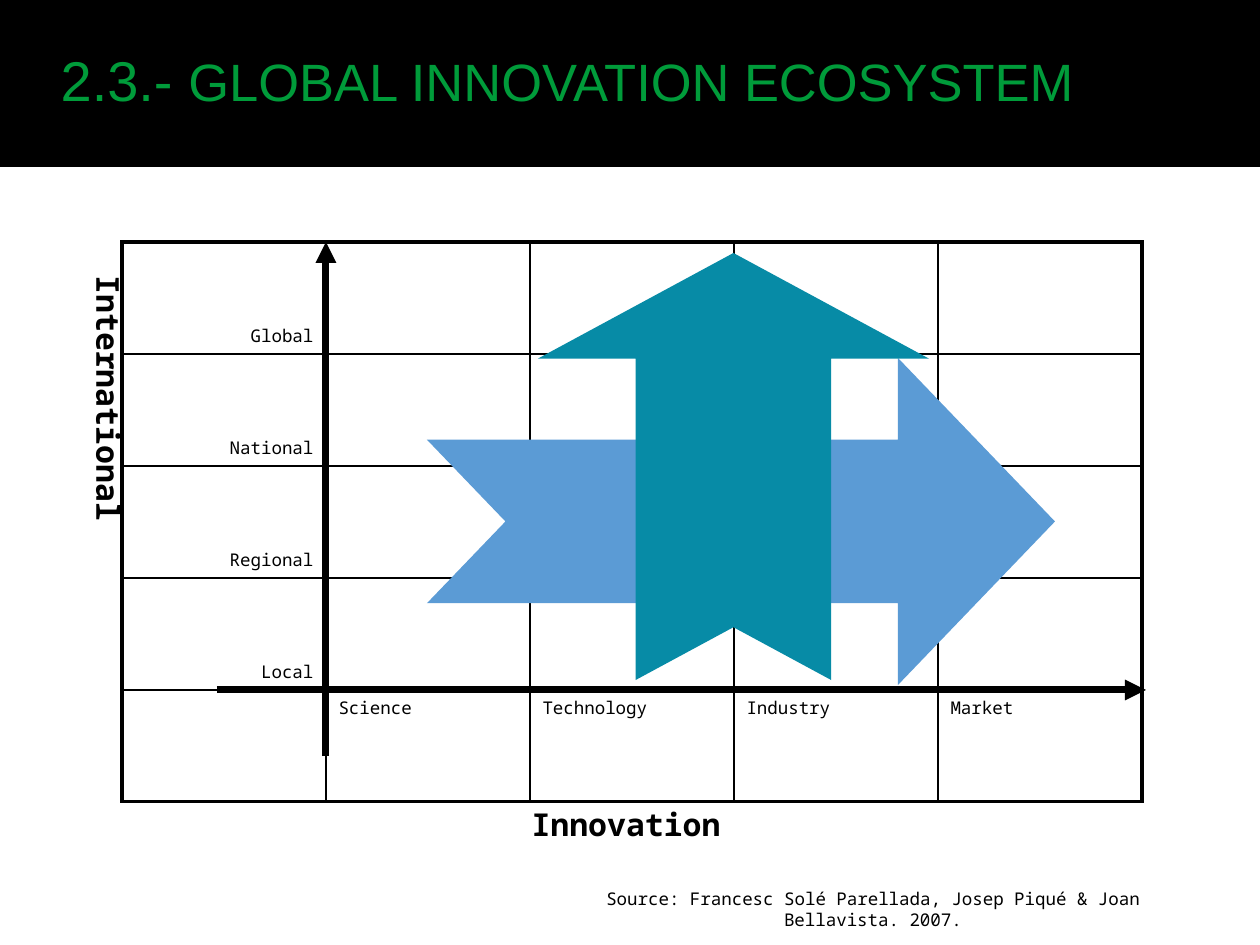
"""Build the global innovation ecosystem slide: a grid with two axes and two arrows."""
from lxml import etree
from pptx import Presentation
from pptx import util as u
from pptx.dml.color import RGBColor
from pptx.enum import shapes, text
from pptx.oxml import ns

PX = 914400 / 126
MONO = "Noto Sans Mono"
BLACK = "000000"


def px(*values):
    return [u.Emu(round(value * PX)) for value in values]


def write(para, words, size, color=BLACK, name=MONO, bold=False):
    span = para.add_run()
    span.text = words
    font = {"size": u.Pt(size), "name": name, "bold": bold}
    for key, value in font.items():
        setattr(span.font, key, value)
    span.font.color.rgb = RGBColor.from_string(color)


deck = Presentation()
deck.slide_width, deck.slide_height = px(1260, 945)
page = deck.slides.add_slide(deck.slide_layouts[5])

bar = page.shapes.add_shape(shapes.MSO_SHAPE.RECTANGLE, *px(0, 0, 1260, 166))
bar.shadow.inherit = False
bar.fill.solid()
bar.fill.fore_color.rgb = RGBColor.from_string(BLACK)
bar.line.color.rgb = RGBColor.from_string(BLACK)
bar.line.width = u.Pt(1)

title = page.shapes.title
bar.element.addnext(title.element)
title.left, title.top, title.width, title.height = px(48, 39, 1048, 81)
title_format = {
    "word_wrap": False,
    "auto_size": text.MSO_AUTO_SIZE.SHAPE_TO_FIT_TEXT,
    "vertical_anchor": text.MSO_ANCHOR.TOP,
}
for key, value in title_format.items():
    setattr(title.text_frame, key, value)
para = title.text_frame.paragraphs[0]
para.alignment = text.PP_ALIGN.LEFT
write(para, "2.3.- ", 32, "009B3A", "Arial")
write(para, "GLOBAL INNOVATION ECOSYSTEM", 30, "009B3A", "Arial")

levels = ["Global", "National", "Regional", "Local"]
stages = ["Science", "Technology", "Industry", "Market"]
labels = {(row, 0): level for row, level in enumerate(levels)}
labels.update({(4, col): stage for col, stage in enumerate(stages, 1)})
grid = page.shapes.add_table(5, 5, *px(122, 242, 1020, 560)).table
grid.first_row = grid.horz_banding = False
for row in range(5):
    grid.rows[row].height = px(112)[0]
    grid.columns[row].width = px(204)[0]
    for col in range(5):
        cell = grid.cell(row, col)
        edges = {"lnL": col == 0, "lnR": col == 4, "lnT": row == 0, "lnB": row == 4}
        for tag, outer in edges.items():
            width = str(u.Pt(2.25 if outer else 1))
            border = etree.SubElement(cell._tc.get_or_add_tcPr(), ns.qn("a:" + tag), w=width)
            fill = etree.SubElement(border, ns.qn("a:solidFill"))
            etree.SubElement(fill, ns.qn("a:srgbClr"), val=BLACK)
        cell.fill.background()
        if (row, col) in labels:
            para = cell.text_frame.paragraphs[0]
            write(para, labels[row, col], 10)
            if col == 0:
                para.alignment = text.PP_ALIGN.RIGHT
                cell.vertical_anchor = text.MSO_ANCHOR.BOTTOM

for ends in [(217, 690, 1146, 690), (326, 756, 326, 242)]:
    axis = page.shapes.add_connector(shapes.MSO_CONNECTOR.STRAIGHT, *px(*ends))
    axis.line.color.rgb = RGBColor.from_string(BLACK)
    axis.line.width = u.Pt(4)
    etree.SubElement(axis.line._get_or_add_ln(), ns.qn("a:tailEnd"), type="triangle")
    etree.SubElement(axis.element.spPr, ns.qn("a:effectLst"))

captions = [
    ("Innovation", (333, 799, 586, 55), 18, True, "horz"),
    ("International", (66, 263, 68, 546), 18, True, "eaVert"),
    ("Source: Francesc Solé Parellada, Josep Piqué & Joan Bellavista. 2007.",
     (563, 882, 620, 37), 10, False, "horz"),
]
for words, place, size, bold, direction in captions:
    box = page.shapes.add_textbox(*px(*place))
    box.text_frame.word_wrap = True
    box.text_frame.auto_size = text.MSO_AUTO_SIZE.SHAPE_TO_FIT_TEXT
    box.text_frame._txBody.bodyPr.set("vert", direction)
    para = box.text_frame.paragraphs[0]
    para.alignment = text.PP_ALIGN.CENTER
    write(para, words, size, bold=bold)

arrows = [
    ((427, 358, 628, 327), 0, 0.48, "5B9BD5"),
    ((520, 271, 427, 391), 270, 0.27, "078BA6"),
]
for place, turn, head, color in arrows:
    arrow = page.shapes.add_shape(shapes.MSO_SHAPE.NOTCHED_RIGHT_ARROW, *px(*place))
    arrow.shadow.inherit = False
    arrow.rotation = turn
    arrow.adjustments[0] = 0.5
    arrow.adjustments[1] = head
    arrow.fill.solid()
    arrow.fill.fore_color.rgb = RGBColor.from_string(color)
    arrow.line.fill.background()

deck.save("out.pptx")
